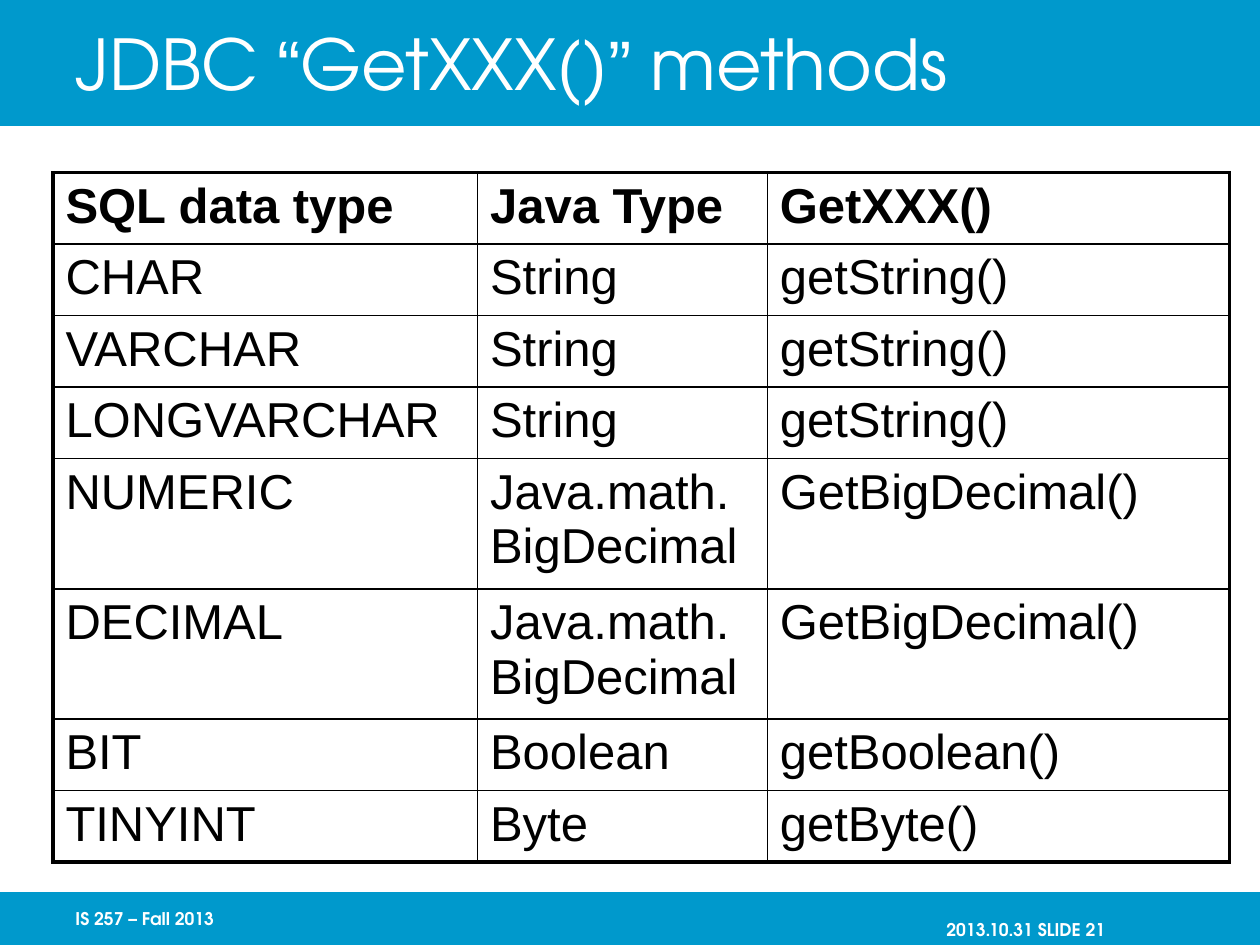
from lxml.etree import SubElement
from pptx import Presentation
from pptx.dml.color import RGBColor
from pptx.enum.shapes import MSO_SHAPE
from pptx.enum.text import MSO_ANCHOR, PP_ALIGN
from pptx.oxml.ns import qn
from pptx.util import Inches, Pt

DISPLAY_FONT = "TeX Gyre Adventor"
BODY_FONT = "Arial"
BAND_COLOR = "0099CC"
WHITE = "FFFFFF"
BLACK = "000000"
OUTER_LINE, INNER_LINE = 2.25, 1
COLUMN_WIDTHS = [3.37, 2.3, 3.67]
LINE_HEIGHT, WRAPPED_HEIGHT = 0.54, 0.97
METHOD_ROWS = [
    ("SQL data type", "Java Type", "GetXXX()"),
    ("CHAR", "String", "getString()"),
    ("VARCHAR", "String", "getString()"),
    ("LONGVARCHAR", "String", "getString()"),
    ("NUMERIC", "Java.math.BigDecimal", "GetBigDecimal()"),
    ("DECIMAL", "Java.math.BigDecimal", "GetBigDecimal()"),
    ("BIT", "Boolean", "getBoolean()"),
    ("TINYINT", "Byte", "getByte()"),
]


def rgb(color):
    """Turn a hex string into a colour."""
    return RGBColor.from_string(color)


def add_run(paragraph, text, font=BODY_FONT, size=28, color=BLACK, bold=False):
    """Append formatted text to a paragraph."""
    run = paragraph.add_run()
    run.text = text
    run.font.name = font
    run.font.size = Pt(size)
    run.font.bold = bold
    run.font.color.rgb = rgb(color)


def add_band(slide, top, height):
    """Draw a coloured band across the slide."""
    shape = slide.shapes.add_shape(
        MSO_SHAPE.RECTANGLE, 0, Inches(top), Inches(10), Inches(height))
    shape.shadow.inherit = False
    shape.fill.solid()
    shape.fill.fore_color.rgb = rgb(BAND_COLOR)
    shape.line.fill.background()


def add_text_box(slide, left, top, width, height, pieces, size,
                 bold=False, align=PP_ALIGN.LEFT, insets=(0.1, 0.1)):
    """Place one line of white text, built from (text, font) pieces."""
    box = slide.shapes.add_textbox(
        Inches(left), Inches(top), Inches(width), Inches(height))
    frame = box.text_frame
    frame.word_wrap = True
    frame.vertical_anchor = MSO_ANCHOR.MIDDLE
    frame.margin_left, frame.margin_right = map(Inches, insets)
    frame.margin_top = frame.margin_bottom = 0
    paragraph = frame.paragraphs[0]
    paragraph.alignment = align
    for text, font in pieces:
        add_run(paragraph, text, font=font, size=size, color=WHITE, bold=bold)


def set_borders(cell, **widths):
    """Draw black cell borders with widths in points, keyed by side."""
    properties = cell._tc.get_or_add_tcPr()
    for side, width in widths.items():
        line = SubElement(properties, qn(f"a:ln{side}"), w=str(Pt(width)))
        fill = SubElement(line, qn("a:solidFill"))
        SubElement(fill, qn("a:srgbClr"), val=BLACK)


def add_methods_table(slide, left, top):
    """Add the table of SQL types, Java types and getter methods."""
    row_count, column_count = len(METHOD_ROWS), len(COLUMN_WIDTHS)
    heights = [WRAPPED_HEIGHT if "." in java_type else LINE_HEIGHT
               for _, java_type, _ in METHOD_ROWS]
    table = slide.shapes.add_table(
        row_count, column_count, Inches(left), Inches(top),
        Inches(sum(COLUMN_WIDTHS)), Inches(sum(heights))).table
    table.first_row = table.horz_banding = False
    for column, width in zip(table.columns, COLUMN_WIDTHS):
        column.width = Inches(width)
    for i, (values, height) in enumerate(zip(METHOD_ROWS, heights)):
        table.rows[i].height = Inches(height)
        for j, text in enumerate(values):
            cell = table.cell(i, j)
            add_run(cell.text_frame.paragraphs[0], text, bold=i == 0)
            set_borders(
                cell,
                L=OUTER_LINE if j == 0 else INNER_LINE,
                R=OUTER_LINE if j == column_count - 1 else INNER_LINE,
                T=OUTER_LINE if i == 0 else INNER_LINE,
                B=OUTER_LINE if i == row_count - 1 else INNER_LINE)
            cell.fill.background()


def main():
    """Build the slide and save it."""
    presentation = Presentation()
    presentation.slide_width = Inches(10)
    presentation.slide_height = Inches(7.5)
    slide = presentation.slides.add_slide(presentation.slide_layouts[6])
    add_band(slide, 0, 1)
    add_band(slide, 7.08, 0.42)
    add_text_box(slide, 7.42, 7.26, 2.08, 0.24,
                 [("2013.10.31 SLIDE 21", DISPLAY_FONT)], 10, bold=True,
                 align=PP_ALIGN.RIGHT, insets=(0, 0.73))
    add_text_box(slide, 0.5, 7.08, 2.08, 0.42,
                 [("IS 257 – Fall 2013", DISPLAY_FONT)], 10, bold=True)
    title = [("JDBC ", DISPLAY_FONT), ("“", BODY_FONT),
             ("GetXXX()", DISPLAY_FONT), ("”", BODY_FONT),
             (" methods", DISPLAY_FONT)]
    add_text_box(slide, 0.5, 0, 8.5, 1, title, 40)
    add_methods_table(slide, 0.42, 1.37)
    presentation.save("out.pptx")


if __name__ == "__main__":
    main()
